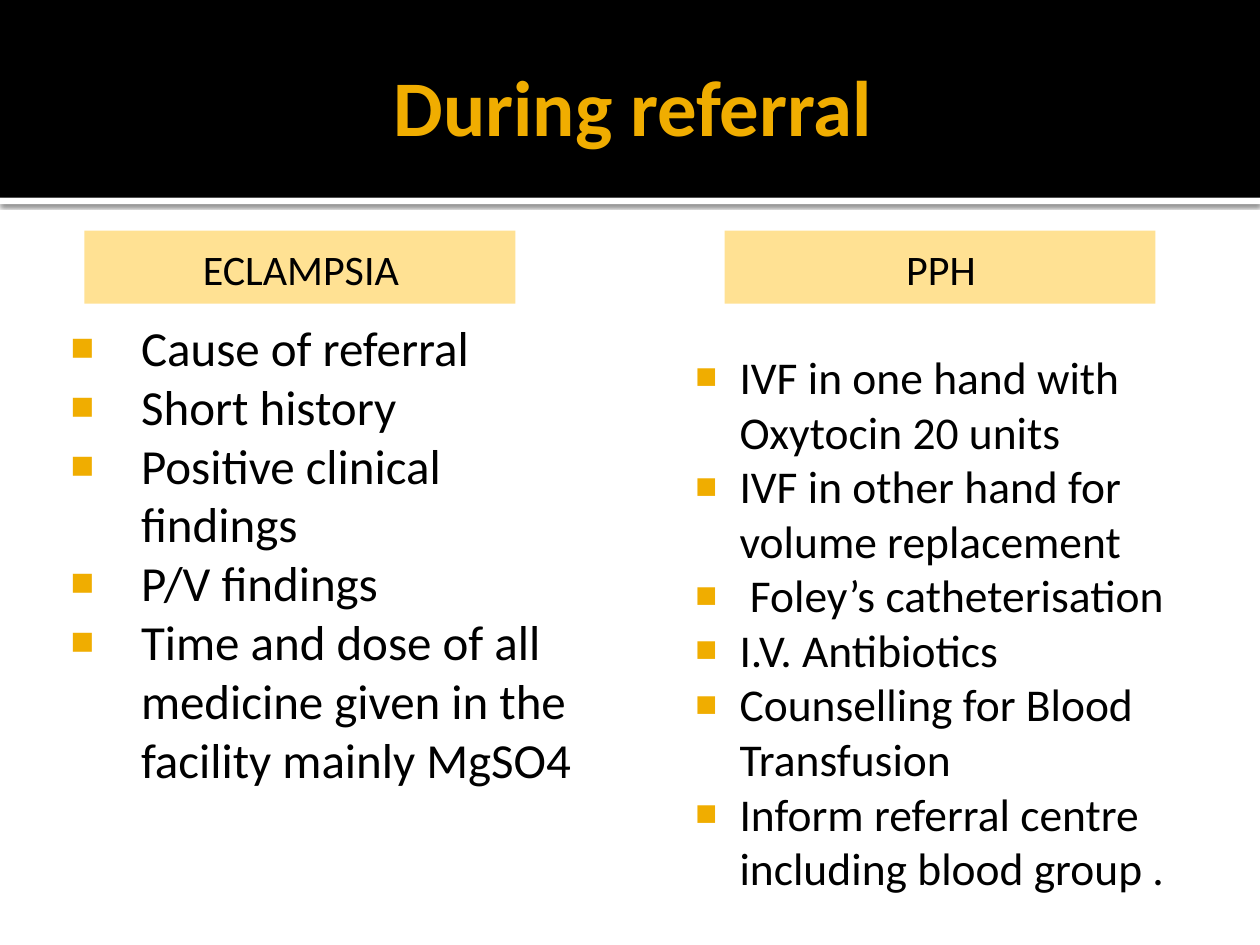
from lxml import etree
from pptx import Presentation
from pptx.dml.color import RGBColor
from pptx.enum import shapes, text
from pptx.oxml import ns
from pptx.util import Inches, Pt

COLORS = {
    "black": "000000",
    "white": "FFFFFF",
    "gold": "F0AD00",
    "cream": "FFE193",
}
FONT = "Calibri"
BODY_INSETS = (0.06, 0.1, 0.1, 0.05)

ECLAMPSIA_POINTS = [
    "Cause of referral",
    "Short history",
    "Positive clinical findings",
    "P/V findings",
    "Time and dose of all medicine given in the facility mainly MgSO4",
]
PPH_POINTS = [
    "IVF in one hand with Oxytocin 20 units",
    "IVF in other hand for volume replacement",
    " Foley’s catheterisation",
    "I.V. Antibiotics",
    "Counselling for Blood Transfusion",
    "Inform referral centre including blood group .",
]


def rgb(name):
    return RGBColor.from_string(COLORS[name])


def add_child(parent, tag, **attributes):
    child = etree.SubElement(parent, ns.qn(tag))
    for key, value in attributes.items():
        child.set(key, str(value))
    return child


def add_bar(slide, box, color):
    bar = slide.shapes.add_shape(shapes.MSO_SHAPE.RECTANGLE, *map(Inches, box))
    bar.shadow.inherit = False
    bar.fill.solid()
    bar.fill.fore_color.rgb = rgb(color)
    bar.line.fill.background()
    return bar


def add_shadow(bar):
    effects = bar._element.spPr.find(ns.qn("a:effectLst"))
    shadow = add_child(effects, "a:outerShdw", blurRad=Pt(2.5), dist=Pt(0.8),
                       dir=90 * 60000, algn="tl", rotWithShape=0)
    color = add_child(shadow, "a:srgbClr", val=COLORS["black"])
    add_child(color, "a:alpha", val=60000)


def set_frame(frame, insets, anchor=text.MSO_ANCHOR.TOP):
    frame.word_wrap = True
    frame.vertical_anchor = anchor
    (frame.margin_left, frame.margin_top,
     frame.margin_right, frame.margin_bottom) = map(Inches, insets)


def style_paragraph(paragraph, size, color="black", bold=False):
    paragraph.font.name = FONT
    paragraph.font.size = Pt(size)
    paragraph.font.bold = bold
    paragraph.font.color.rgb = rgb(color)


def set_indent(paragraph, left, hanging):
    properties = paragraph._p.get_or_add_pPr()
    properties.set("marL", str(Inches(left)))
    properties.set("indent", str(-Inches(hanging)))


def add_bullet(paragraph):
    properties = paragraph._p.get_or_add_pPr()
    bullet = [
        add_child(add_child(properties, "a:buClr"), "a:srgbClr",
                  val=COLORS["gold"]).getparent(),
        add_child(properties, "a:buSzPct", val=80000),
        add_child(properties, "a:buFont", typeface="Arial"),
        add_child(properties, "a:buChar", char="■"),
    ]
    # Bullet settings come before the paragraph's font settings
    for position, element in enumerate(bullet):
        properties.insert(position, element)


def add_title(slide, box, words):
    title = slide.shapes.add_textbox(*map(Inches, box))
    set_frame(title.text_frame, (0.1, 0.05, 0.05, 0.05), text.MSO_ANCHOR.MIDDLE)
    paragraph = title.text_frame.paragraphs[0]
    paragraph.text = words
    paragraph.alignment = text.PP_ALIGN.CENTER
    style_paragraph(paragraph, 45, "gold", bold=True)


def add_heading(slide, left, words):
    heading = add_bar(slide, (left, 1.83, 3.42, 0.58), "cream")
    set_frame(heading.text_frame, BODY_INSETS)
    paragraph = heading.text_frame.paragraphs[0]
    paragraph.text = words
    paragraph.alignment = text.PP_ALIGN.CENTER
    set_indent(paragraph, 0.48, 0.35)
    style_paragraph(paragraph, 24)


def add_bullet_list(slide, box, points, size, left, hanging):
    bullet_list = slide.shapes.add_textbox(*map(Inches, box))
    frame = bullet_list.text_frame
    set_frame(frame, BODY_INSETS)
    for index, point in enumerate(points):
        paragraph = frame.add_paragraph() if index else frame.paragraphs[0]
        paragraph.text = point
        style_paragraph(paragraph, size)
        set_indent(paragraph, left, hanging)
        add_bullet(paragraph)


def main():
    presentation = Presentation()
    presentation.slide_width = Inches(10)
    presentation.slide_height = Inches(7.5)
    slide = presentation.slides.add_slide(presentation.slide_layouts[6])

    # Title band with a shadowed white rule below it
    add_shadow(add_bar(slide, (0, 1.57, 10, 0.05), "white"))
    add_bar(slide, (0, 0, 10, 1.57), "black")
    add_title(slide, (0.5, 0.33, 9, 1), "During referral")

    # Two columns of referral points
    add_bullet_list(slide, (0.5, 2.42, 4.25, 4.67), ECLAMPSIA_POINTS,
                    28, 0.56, 0.56)
    add_bullet_list(slide, (5.33, 2.67, 4.17, 4.42), PPH_POINTS,
                    26, 0.48, 0.35)

    # Column headings
    add_heading(slide, 0.67, "ECLAMPSIA ")
    add_heading(slide, 5.75, "PPH ")

    presentation.save("out.pptx")


if __name__ == "__main__":
    main()
